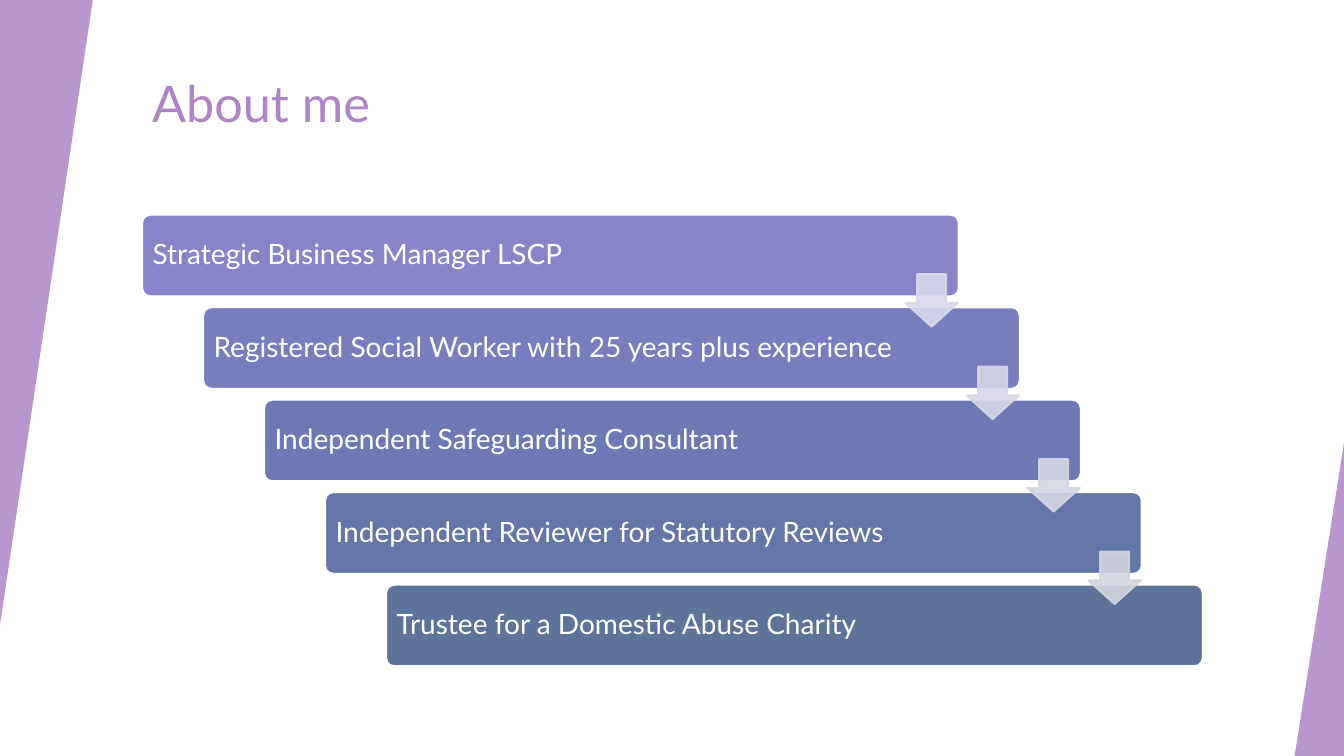
from lxml.etree import SubElement
from pptx import Presentation
from pptx.dml.color import RGBColor
from pptx.enum.shapes import MSO_SHAPE
from pptx.enum.text import MSO_ANCHOR, PP_ALIGN
from pptx.oxml.ns import qn
from pptx.util import Inches, Pt

COLORS = {"accent": "AD84C6", "white": "FFFFFF"}
FONT = "Lato"

presentation = Presentation()
presentation.slide_width = Inches(13.33)
presentation.slide_height = Inches(7.5)
slide = presentation.slides.add_slide(presentation.slide_layouts[6])


def add_filled_shape(kind, box, adjustments, fill, line=None, opacity=100):
    shape = slide.shapes.add_shape(kind, *[Inches(length) for length in box])
    shape.shadow.inherit = False
    for index, value in enumerate(adjustments):
        shape.adjustments[index] = value
    shape.fill.solid()
    shape.fill.fore_color.rgb = RGBColor.from_string(fill)
    if line:
        shape.line.color.rgb = RGBColor.from_string(line)
        shape.line.width = Pt(1.5)
    else:
        shape.line.fill.background()
    if opacity < 100:
        for color in shape._element.spPr.iter(qn("a:srgbClr")):
            SubElement(color, qn("a:alpha"), val=str(opacity * 1000))
    return shape


def write_text(shape, text, size, color, frame_format):
    frame = shape.text_frame
    for name, value in frame_format.items():
        setattr(frame, name, value)
    paragraph = frame.paragraphs[0]
    paragraph.alignment = PP_ALIGN.LEFT
    run = paragraph.add_run()
    run.text = text
    run.font.name = FONT
    run.font.size = Pt(size)
    run.font.color.rgb = RGBColor.from_string(color)
    return paragraph


# Title
title = slide.shapes.add_textbox(Inches(1.41), Inches(0.67), Inches(11.15), Inches(1.2))
write_text(title, "About me", 36, COLORS["accent"],
           {"word_wrap": True, "vertical_anchor": MSO_ANCHOR.TOP})

# Slanted wedges at both edges
for box, rotation in [((0, 0, 0.92, 6.2), 180), ((12.84, 4.39, 0.49, 3.11), 0)]:
    wedge = add_filled_shape(MSO_SHAPE.ISOSCELES_TRIANGLE, box, [1],
                             COLORS["accent"], opacity=85)
    wedge.rotation = rotation

# Staircase of roles: text and bar colour
roles = [
    ("Strategic Business Manager LSCP", "8784C7"),
    ("Registered Social Worker with 25 years plus experience", "797DBD"),
    ("Independent Safeguarding Consultant", "6E79B3"),
    ("Independent Reviewer for Statutory Reviews", "6476A8"),
    ("Trustee for a Domestic Abuse Charity", "5D739A"),
]
STEP_X, STEP_Y = 0.605, 0.9175
bar_format = {
    "word_wrap": True,
    "vertical_anchor": MSO_ANCHOR.MIDDLE,
    "margin_left": Inches(0.08),
    "margin_right": Inches(1),
    "margin_top": Inches(0.08),
    "margin_bottom": Inches(0.08),
}
for index, (role, fill) in enumerate(roles):
    box = (1.41 + index * STEP_X, 2.13 + index * STEP_Y, 8.1, 0.81)
    bar = add_filled_shape(MSO_SHAPE.ROUNDED_RECTANGLE, box, [0.1], fill, COLORS["white"])
    paragraph = write_text(bar, role, 20, COLORS["white"], bar_format)
    paragraph.line_spacing = 0.9

# Arrows from each step to the next
for index, fill in enumerate(["D9D9EB", "D6D7E7", "D4D7E2", "D2D5DE"]):
    box = (8.98 + index * STEP_X, 2.72 + index * STEP_Y, 0.52, 0.52)
    # Down arrow adjustments: head length, then shaft width
    arrow = add_filled_shape(MSO_SHAPE.DOWN_ARROW, box, [0.55, 0.45], fill, fill, 90)

presentation.save("out.pptx")
